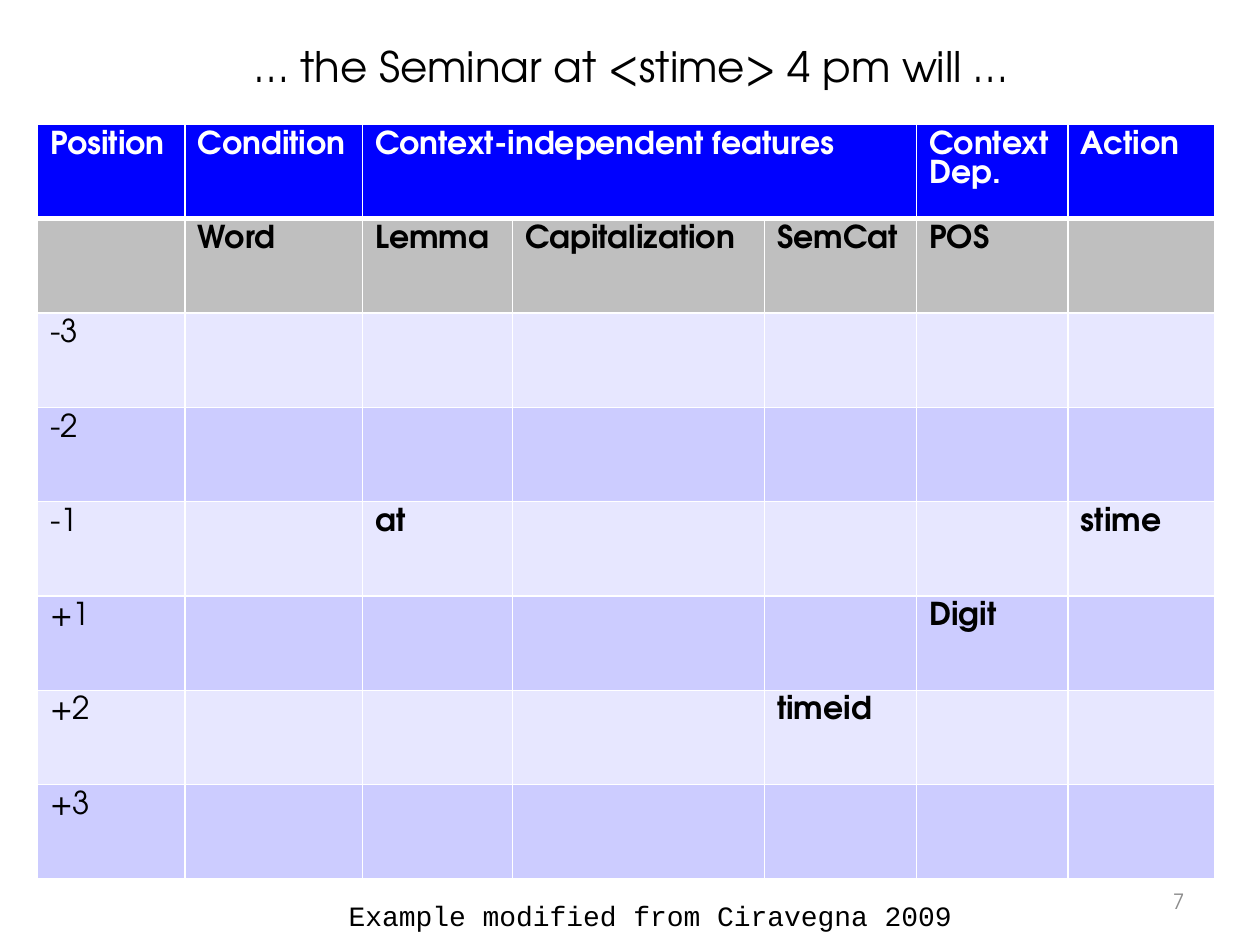
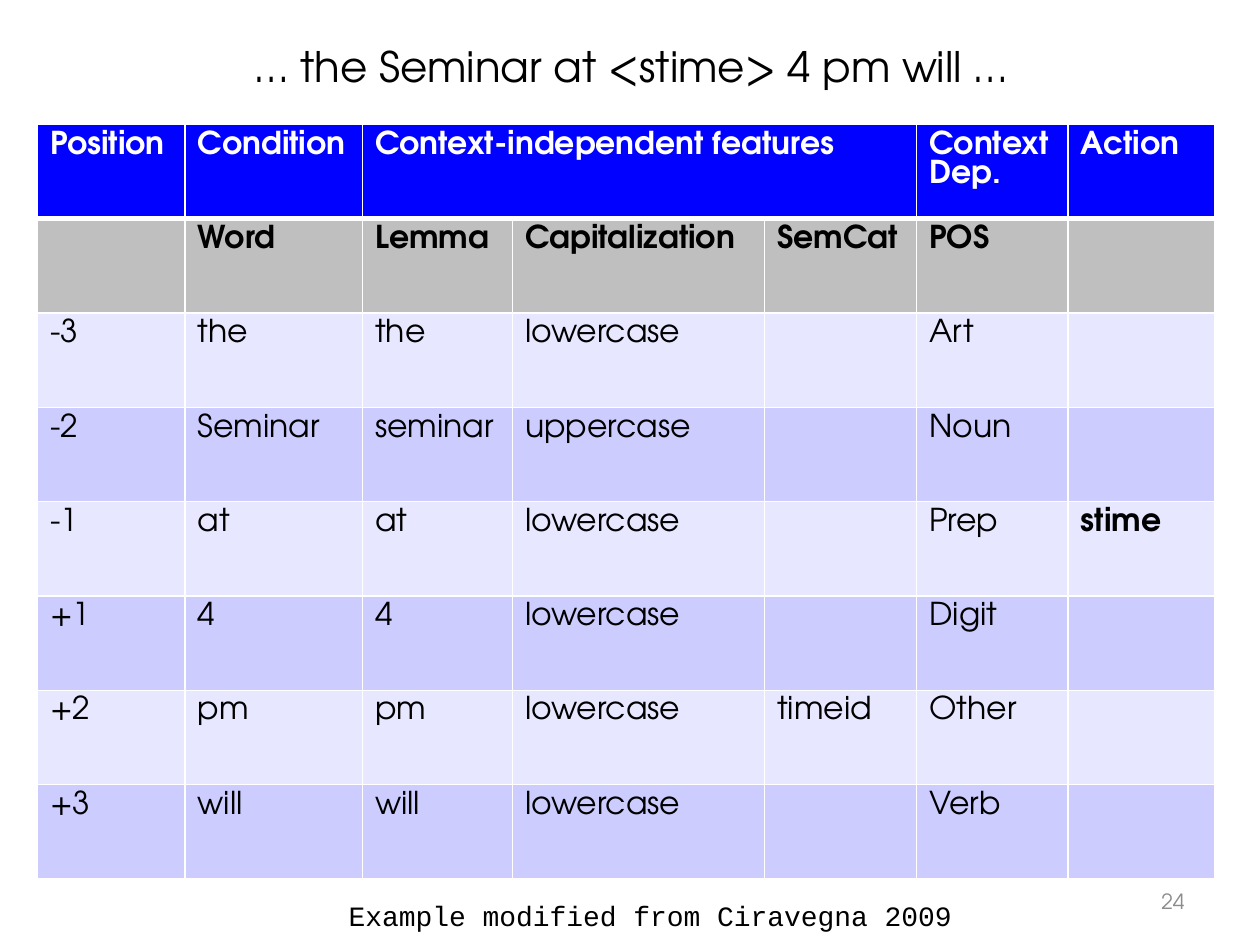
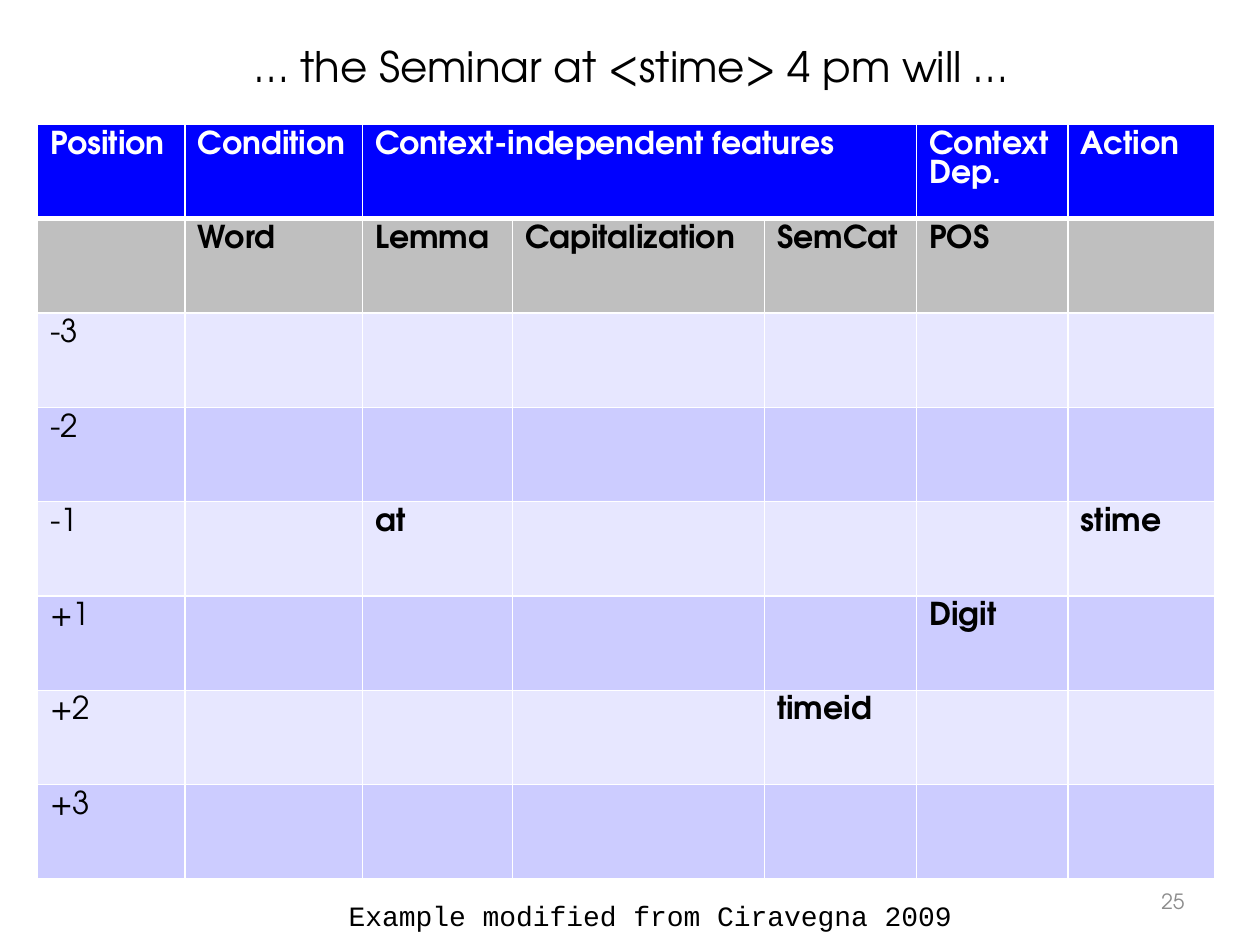
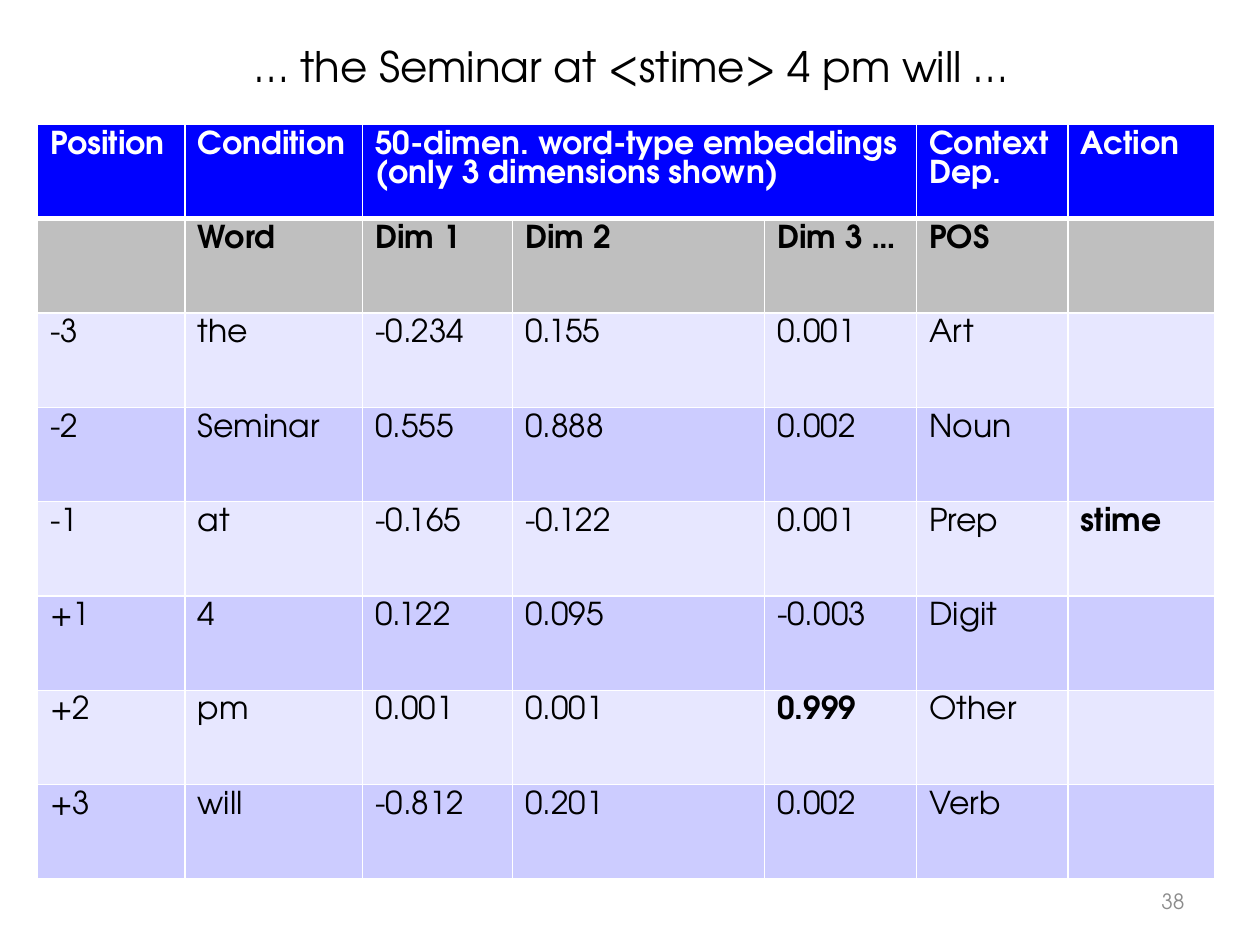
import lxml.etree
import pptx
import pptx.dml.color
import pptx.enum.text
import pptx.oxml.ns
import pptx.util

Cm = pptx.util.Cm
COLORS = {
    "black": "000000",
    "white": "FFFFFF",
    "header": "0001FF",
    "subheader": "BFBFBF",
    "light_band": "E7E7FF",
    "dark_band": "CCCCFF",
    "page_number": "8C8C8C",
}
SANS = "TeX Gyre Adventor"
MONO = "Courier New"

TITLE = "… the Seminar at <stime> 4 pm will …"
CREDIT = "Example modified from Ciravegna 2009"
TITLE_BOX = (4.88, 0.69, 19.63, 1.27)
TABLE_BOX = (0.76, 2.51, 23.72, 15.21)
CREDIT_BOX = (6.78, 17.98, 12.98, 0.94)
NUMBER_BOX = (18.21, 17.65, 5.92, 1.02)
COLUMN_WIDTHS = (2.97, 3.58, 3.02, 5.08, 3.07, 3.05, 2.95)
FEATURE_COLUMNS = (2, 4)

POSITIONS = ["-3", "-2", "-1", "+1", "+2", "+3"]
WORDS = ["the", "Seminar", "at", "4", "pm", "will"]
TAGS = ["Art", "Noun", "Prep", "Digit", "Other", "Verb"]
BLANK = [""] * len(POSITIONS)
ACTIONS = ["", "", "stime", "", "", ""]
SEMANTIC = ["", "", "", "", "timeid", ""]

RULE = {
    "group": "Context-independent features",
    "features": ("Lemma", "Capitalization", "SemCat"),
    "columns": (BLANK, ["", "", "at", "", "", ""], BLANK, SEMANTIC,
                ["", "", "", "Digit", "", ""]),
    "emphasis": {"at", "stime", "Digit", "timeid"},
    "credit": CREDIT,
}
INSTANCE = {
    **RULE,
    "columns": (WORDS, [word.lower() for word in WORDS],
                ["uppercase" if word[0].isupper() else "lowercase" for word in WORDS],
                SEMANTIC, TAGS),
    "emphasis": {"stime"},
}
EMBEDDINGS = {
    "group": "50-dimen. word-type embeddings (only 3 dimensions shown)",
    "features": ("Dim 1", "Dim 2", "Dim 3 …"),
    "columns": (WORDS,
                ["-0.234", "0.555", "-0.165", "0.122", "0.001", "-0.812"],
                ["0.155", "0.888", "-0.122", "0.095", "0.001", "0.201"],
                ["0.001", "0.002", "0.001", "-0.003", "0.999", "0.002"],
                TAGS),
    "emphasis": {"stime", "0.999"},
    "credit": None,
}
SLIDES = ((7, RULE), (24, INSTANCE), (25, RULE), (38, EMBEDDINGS))


def rgb(name):
    """Return the named colour."""
    return pptx.dml.color.RGBColor.from_string(COLORS[name])


def write_text(text_frame, text, size, color="black", font=SANS, bold=False):
    """Set the text of a frame and format its runs."""
    text_frame.text = text
    for paragraph in text_frame.paragraphs:
        for run in paragraph.runs:
            run.font.size = pptx.util.Pt(size)
            run.font.name = font
            run.font.bold = bold
            run.font.color.rgb = rgb(color)


def add_title(slide, box):
    """Place the slide title, left aligned, in its box."""
    shape = slide.shapes.title
    shape.left, shape.top, shape.width, shape.height = map(Cm, box)
    text_frame = shape.text_frame
    write_text(text_frame, TITLE, 24)
    text_frame.vertical_anchor = pptx.enum.text.MSO_ANCHOR.TOP
    text_frame.auto_size = pptx.enum.text.MSO_AUTO_SIZE.SHAPE_TO_FIT_TEXT
    text_frame.paragraphs[0].alignment = pptx.enum.text.PP_ALIGN.LEFT


def add_label(slide, box, text, size, **style):
    """Add a wrapped text box and return its text frame."""
    text_frame = slide.shapes.add_textbox(*map(Cm, box)).text_frame
    text_frame.word_wrap = True
    write_text(text_frame, text, size, **style)
    return text_frame


def add_page_number(slide, box, number):
    """Add the right-aligned page number."""
    text_frame = add_label(slide, box, str(number), 12, color="page_number")
    text_frame.vertical_anchor = pptx.enum.text.MSO_ANCHOR.MIDDLE
    text_frame.paragraphs[0].alignment = pptx.enum.text.PP_ALIGN.RIGHT


def set_borders(cell, top, bottom):
    """Draw white cell borders with the given top and bottom widths."""
    qualified = pptx.oxml.ns.qn
    properties = cell._tc.get_or_add_tcPr()
    for side, width in (("L", 1), ("R", 1), ("T", top), ("B", bottom)):
        line = lxml.etree.SubElement(properties, qualified(f"a:ln{side}"),
                                     w=str(pptx.util.Pt(width)))
        fill = lxml.etree.SubElement(line, qualified("a:solidFill"))
        lxml.etree.SubElement(fill, qualified("a:srgbClr"), val=COLORS["white"])


def row_fill(row):
    """Return the colour name for a table row."""
    if row < 2:
        return ("header", "subheader")[row]
    return ("light_band", "dark_band")[row % 2]


def add_feature_table(slide, box, content):
    """Add the token feature table with its two heading rows."""
    rows = [
        ("Position", "Condition", content["group"], "", "", "Context Dep.", "Action"),
        ("", "Word", *content["features"], "POS", ""),
        *zip(POSITIONS, *content["columns"], ACTIONS),
    ]
    frame = slide.shapes.add_table(len(rows), len(COLUMN_WIDTHS), *map(Cm, box))
    table = frame.table
    table.horz_banding = False
    for column, width in zip(table.columns, COLUMN_WIDTHS):
        column.width = Cm(width)
    first, last = FEATURE_COLUMNS
    table.cell(0, first).merge(table.cell(0, last))
    for row, texts in enumerate(rows):
        for column, text in enumerate(texts):
            cell = table.cell(row, column)
            set_borders(cell, 3 if row == 1 else 1, 3 if row == 0 else 1)
            cell.fill.solid()
            cell.fill.fore_color.rgb = rgb(row_fill(row))
            emphasized = column > 1 and text in content["emphasis"]
            write_text(cell.text_frame, text, 18,
                       color="white" if row == 0 else "black",
                       bold=row < 2 or emphasized)


def add_feature_slide(presentation, number, content):
    """Add one slide with title, feature table, credit and number."""
    slide = presentation.slides.add_slide(presentation.slide_layouts[5])
    add_page_number(slide, NUMBER_BOX, number)
    add_feature_table(slide, TABLE_BOX, content)
    add_title(slide, TITLE_BOX)
    if content["credit"]:
        text_frame = add_label(slide, CREDIT_BOX, content["credit"], 16, font=MONO)
        text_frame.auto_size = pptx.enum.text.MSO_AUTO_SIZE.SHAPE_TO_FIT_TEXT


def main():
    """Build and save the presentation."""
    presentation = pptx.Presentation()
    presentation.slide_width, presentation.slide_height = Cm(25.4), Cm(19.05)
    for number, content in SLIDES:
        add_feature_slide(presentation, number, content)
    presentation.save("out.pptx")


if __name__ == "__main__":
    main()
